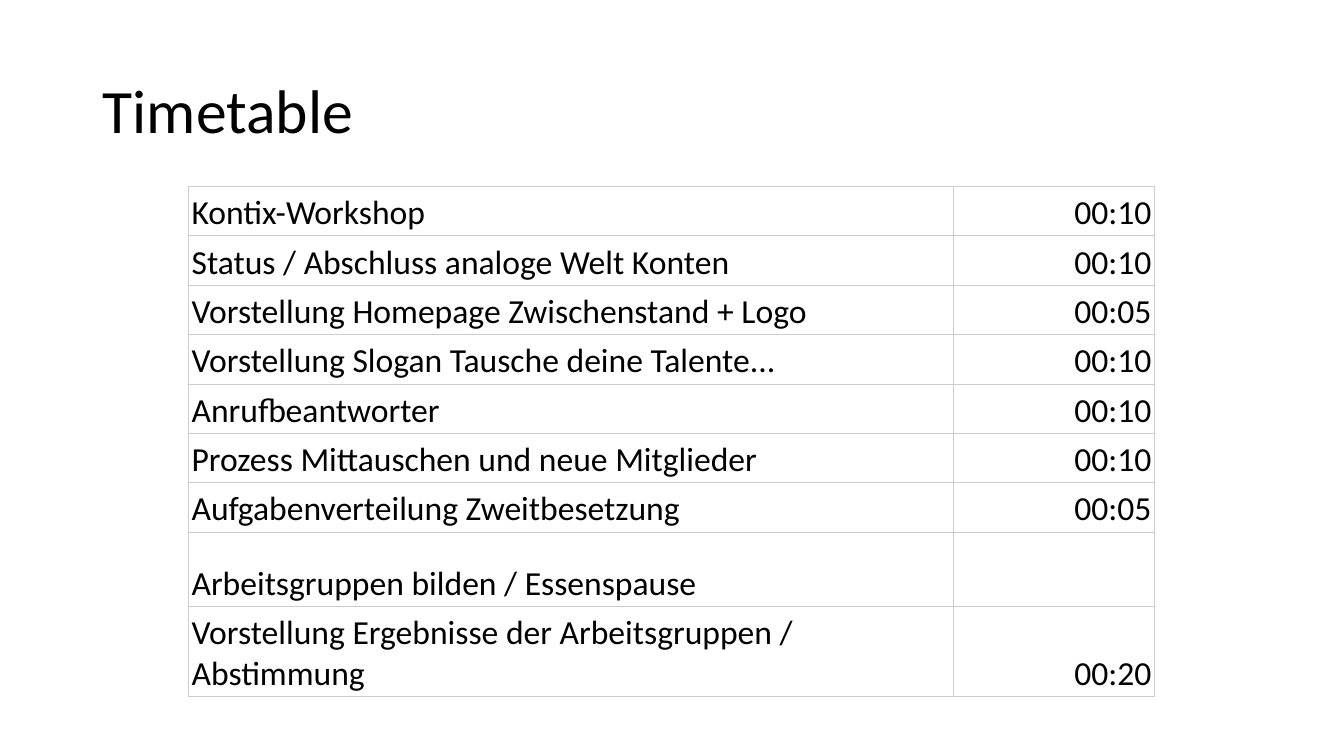
from pptx import Presentation
from pptx.dml.color import RGBColor
from pptx.enum.text import MSO_ANCHOR, PP_ALIGN
from pptx.oxml import parse_xml
from pptx.oxml.ns import nsdecls
from pptx.util import Inches, Pt

TITLE = "Timetable"
AGENDA = [
    ("Kontix-Workshop", "00:10", 0.49),
    ("Status / Abschluss analoge Welt Konten", "00:10", 0.49),
    ("Vorstellung Homepage Zwischenstand + Logo", "00:05", 0.49),
    ("Vorstellung Slogan Tausche deine Talente...", "00:10", 0.49),
    ("Anrufbeantworter", "00:10", 0.49),
    ("Prozess Mittauschen und neue Mitglieder", "00:10", 0.49),
    ("Aufgabenverteilung Zweitbesetzung", "00:05", 0.49),
    ("Arbeitsgruppen bilden / Essenspause", "", 0.74),
    ("Vorstellung Ergebnisse der Arbeitsgruppen / Abstimmung", "00:20", 0.89),
]
COL_WIDTHS = (7.59, 1.99)
ALIGNS = (PP_ALIGN.LEFT, PP_ALIGN.RIGHT)
BLACK = RGBColor(0x00, 0x00, 0x00)
GRID = RGBColor(0xCC, 0xCC, 0xCC)
CELL_FORMAT = {
    "vertical_anchor": MSO_ANCHOR.BOTTOM,
    "margin_left": Inches(0.03),
    "margin_right": Inches(0.03),
    "margin_top": Inches(0.02),
    "margin_bottom": Inches(0.02),
}
TITLE_BOX = {
    "left": Inches(0.92),
    "top": Inches(0.4),
    "width": Inches(11.5),
    "height": Inches(1.45),
}


def set_format(target, values):
    for name, value in values.items():
        setattr(target, name, value)


def write(p, text, size, align):
    p.alignment = align
    set_format(p.font, {"size": Pt(size), "name": "Calibri"})
    if text:
        r = p.add_run()
        r.text = text
        set_format(r.font, {"size": Pt(size), "name": "Calibri"})
        r.font.color.rgb = BLACK


def add_borders(cell):
    tc_pr = cell._tc.get_or_add_tcPr()
    for i, side in enumerate(("lnL", "lnR", "lnT", "lnB")):
        tc_pr.insert(i, parse_xml(
            f'<a:{side} {nsdecls("a")} w="{Pt(0.68)}"><a:solidFill>'
            f'<a:srgbClr val="{GRID}"/></a:solidFill></a:{side}>'))


prs = Presentation()
set_format(prs, {"slide_width": Inches(13.33), "slide_height": Inches(7.5)})
s = prs.slides.add_slide(prs.slide_layouts[5])

title = s.shapes.title
set_format(title, TITLE_BOX)
tf = title.text_frame
set_format(tf, {"vertical_anchor": MSO_ANCHOR.MIDDLE, "word_wrap": True})
tf.paragraphs[0].line_spacing = 0.9
write(tf.paragraphs[0], TITLE, 44, PP_ALIGN.LEFT)

height = sum(row[2] for row in AGENDA)
table = s.shapes.add_table(
    len(AGENDA), len(COL_WIDTHS), Inches(1.87), Inches(1.85),
    Inches(sum(COL_WIDTHS)), Inches(height)).table
set_format(table, {"first_row": False, "horz_banding": False})
for col, width in zip(table.columns, COL_WIDTHS):
    col.width = Inches(width)

for row, (topic, duration, row_height) in zip(table.rows, AGENDA):
    row.height = Inches(row_height)
    for cell, text, align in zip(row.cells, (topic, duration), ALIGNS):
        set_format(cell, CELL_FORMAT)
        cell.fill.background()
        add_borders(cell)
        write(cell.text_frame.paragraphs[0], text, 24, align)

prs.save("out.pptx")
